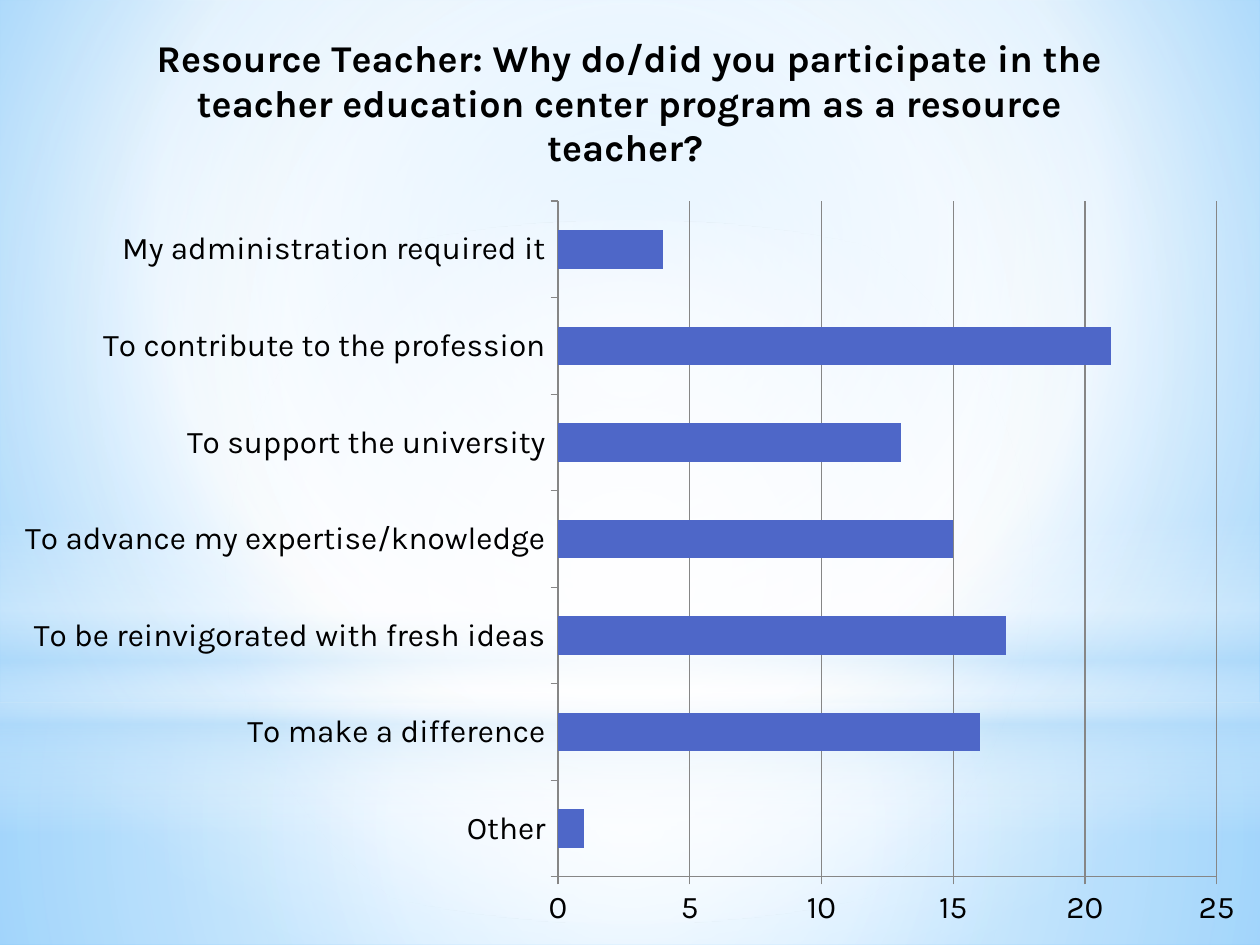
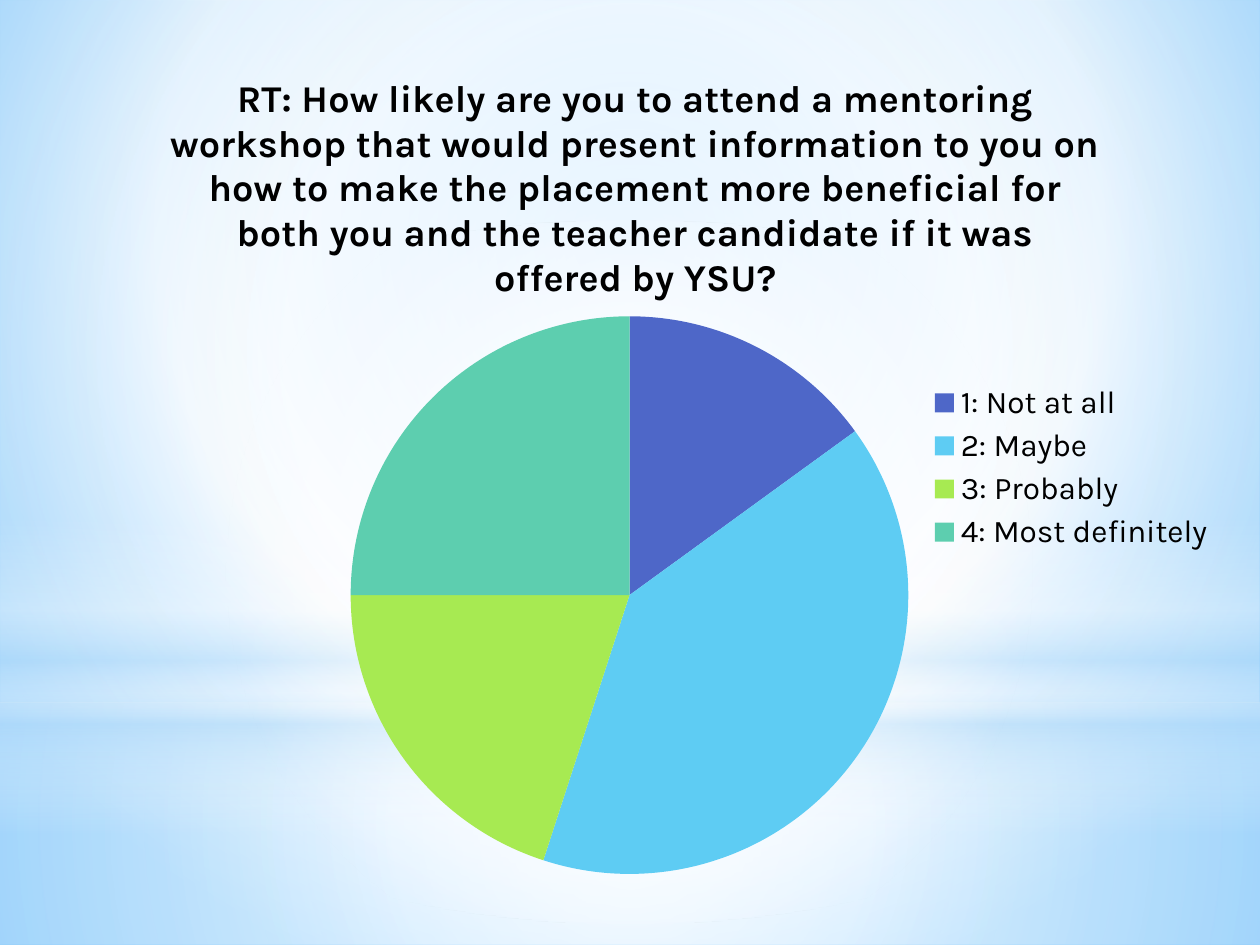
from lxml import etree
from pptx import Presentation
from pptx import util as u
from pptx.chart import data
from pptx.dml import color
from pptx.enum import chart as charts, shapes
from pptx.oxml import ns, parse_xml

FONT = "Karla"
BLUE, SKY, LIME, GREEN = "4E67C8", "5ECCF3", "A7EA52", "5DCEAF"
WHITE, MIST, BLACK, GREY = "FFFFFF", "B4DCFA", "000000", "868686"


def rgb(value):
    return color.RGBColor.from_string(value)


def set_gradient(fill, holder, stops, center=None):
    fill.solid()
    gradient = parse_xml(f'<a:gradFill {ns.nsdecls("a")} rotWithShape="1"><a:gsLst/></a:gradFill>')
    for position, tone, opacity in stops:
        stop = etree.SubElement(gradient[0], ns.qn("a:gs"), pos=str(position * 1000))
        tint = etree.SubElement(stop, ns.qn("a:srgbClr"), val=tone)
        if opacity < 100:
            etree.SubElement(tint, ns.qn("a:alpha"), val=str(opacity * 1000))
    if center:
        path = etree.SubElement(gradient, ns.qn("a:path"), path="circle")
        sides = {side: str(share * 1000) for side, share in zip("ltrb", center)}
        etree.SubElement(path, ns.qn("a:fillToRect"), **sides)
    else:
        etree.SubElement(gradient, ns.qn("a:lin"), ang="5400000", scaled="0")
    solid = next(holder.iter(ns.qn("a:solidFill")))
    solid.getparent().replace(solid, gradient)


prs = Presentation()
prs.slide_width, prs.slide_height = u.Cm(25.4), u.Cm(19.05)
master = prs.slide_master
reasons_slide, workshop_slide = [prs.slides.add_slide(prs.slide_layouts[6]) for _ in range(2)]

set_gradient(master.background.fill, master.element.cSld,
             [(0, "9ED5FF", 100), (60, WHITE, 100), (100, "5BB9FF", 100)], (20, 10, 20, 60))

middle = (50, 50, 50, 50)
RECT, OVAL = shapes.MSO_SHAPE.RECTANGLE, shapes.MSO_SHAPE.OVAL
glows = [
    (RECT, 14.17, 4.88, [(0, WHITE, 91), (37, WHITE, 76), (100, MIST, 79)], middle),
    (RECT, 0, 14.17, [(0, WHITE, 89), (48, WHITE, 62), (100, MIST, 79)], middle),
    (RECT, 10.46, 6.35, [(0, WHITE, 0), (29, WHITE, 30), (45, MIST, 40),
                         (55, WHITE, 26), (65, MIST, 60), (100, WHITE, 0)], None),
    (OVAL, 4.45, 14.17, [(0, WHITE, 100), (56, WHITE, 0)], middle),
]
for number, (outline, top, height, stops, center) in enumerate(glows, 101):
    glow = reasons_slide.shapes.add_shape(outline, 0, u.Cm(top), prs.slide_width, u.Cm(height))
    glow.shadow.inherit = False
    glow.line.fill.background()
    set_gradient(glow.fill, glow.element.spPr, stops, center)
    glow.element.nvSpPr.cNvPr.set("id", str(number))
    master.element.cSld.spTree.append(glow.element)

reasons_data = data.CategoryChartData()
reasons_data.categories = [
    "Other", "To make a difference", "To be reinvigorated with fresh ideas",
    "To advance my expertise/knowledge", "To support the university",
    "To contribute to the profession", "My administration required it"]
reasons_data.add_series("Series 1", [1, 16, 17, 15, 13, 21, 4])
reasons = reasons_slide.shapes.add_chart(
    charts.XL_CHART_TYPE.BAR_CLUSTERED, 0, 0, prs.slide_width, prs.slide_height, reasons_data).chart

workshop_question = (
    "RT: How likely are you to attend a mentoring workshop that would present information to you "
    "on how to make the placement more beneficial for both you and the teacher candidate "
    "if it was offered by YSU?")
workshop_data = data.CategoryChartData()
workshop_data.categories = ["1: Not at all", "2: Maybe", "3: Probably", "4: Most definitely"]
workshop_data.add_series(workshop_question, [15, 40, 20, 25])
workshop = workshop_slide.shapes.add_chart(
    charts.XL_CHART_TYPE.PIE, u.Cm(0.85), u.Cm(0.85), u.Cm(23.92), u.Cm(17.15), workshop_data).chart

questions = [
    (reasons, "Resource Teacher: Why do/did you participate in the teacher education center "
              "program as a resource teacher? "),
    (workshop, workshop_question),
]
for survey, question in questions:
    survey.font.name = FONT
    survey.font.size = u.Pt(18)
    survey.font.color.rgb = rgb(BLACK)
    survey.has_title = True
    survey.chart_title.include_in_layout = False
    heading = survey.chart_title.text_frame.paragraphs[0].add_run()
    heading.text = question
    heading.font.name = FONT
    heading.font.size = u.Pt(21.6)
    heading.font.bold = True
    heading.font.color.rgb = rgb(BLACK)

reasons.has_legend = False
bars = reasons.plots[0]
bars.gap_width = 150
bars.vary_by_categories = False
bars.series[0].format.fill.solid()
bars.series[0].format.fill.fore_color.rgb = rgb(BLUE)
counts = reasons.value_axis
counts.minimum_scale, counts.maximum_scale, counts.major_unit = 0, 25, 5
counts.has_major_gridlines = True
reasons.category_axis.has_major_gridlines = False
for axis in (counts, reasons.category_axis):
    axis.major_tick_mark = charts.XL_TICK_MARK.OUTSIDE
    axis.minor_tick_mark = charts.XL_TICK_MARK.NONE
for rule in (counts, reasons.category_axis, counts.major_gridlines):
    rule.format.line.color.rgb = rgb(GREY)
    rule.format.line.width = u.Pt(0.75)

workshop.has_legend = True
workshop.legend.position = charts.XL_LEGEND_POSITION.RIGHT
workshop.legend.include_in_layout = False
answers = workshop.plots[0]
answers.vary_by_categories = True
for index, tone in enumerate([BLUE, SKY, LIME, GREEN]):
    answer = answers.series[0].points[index].format
    answer.fill.solid()
    answer.fill.fore_color.rgb = rgb(tone)
    answer.line.fill.background()

pie_area = next(workshop.element.iter(ns.qn("c:plotArea")))
for old_layout in pie_area.findall(ns.qn("c:layout")):
    pie_area.remove(old_layout)
pie_area.insert(0, parse_xml(
    f'<c:layout {ns.nsdecls("c")}><c:manualLayout><c:layoutTarget val="inner"/>'
    '<c:xMode val="edge"/><c:yMode val="edge"/><c:x val="0.26"/><c:y val="0.31"/>'
    '<c:w val="0.47"/><c:h val="0.7"/></c:manualLayout></c:layout>'))

prs.save("out.pptx")
